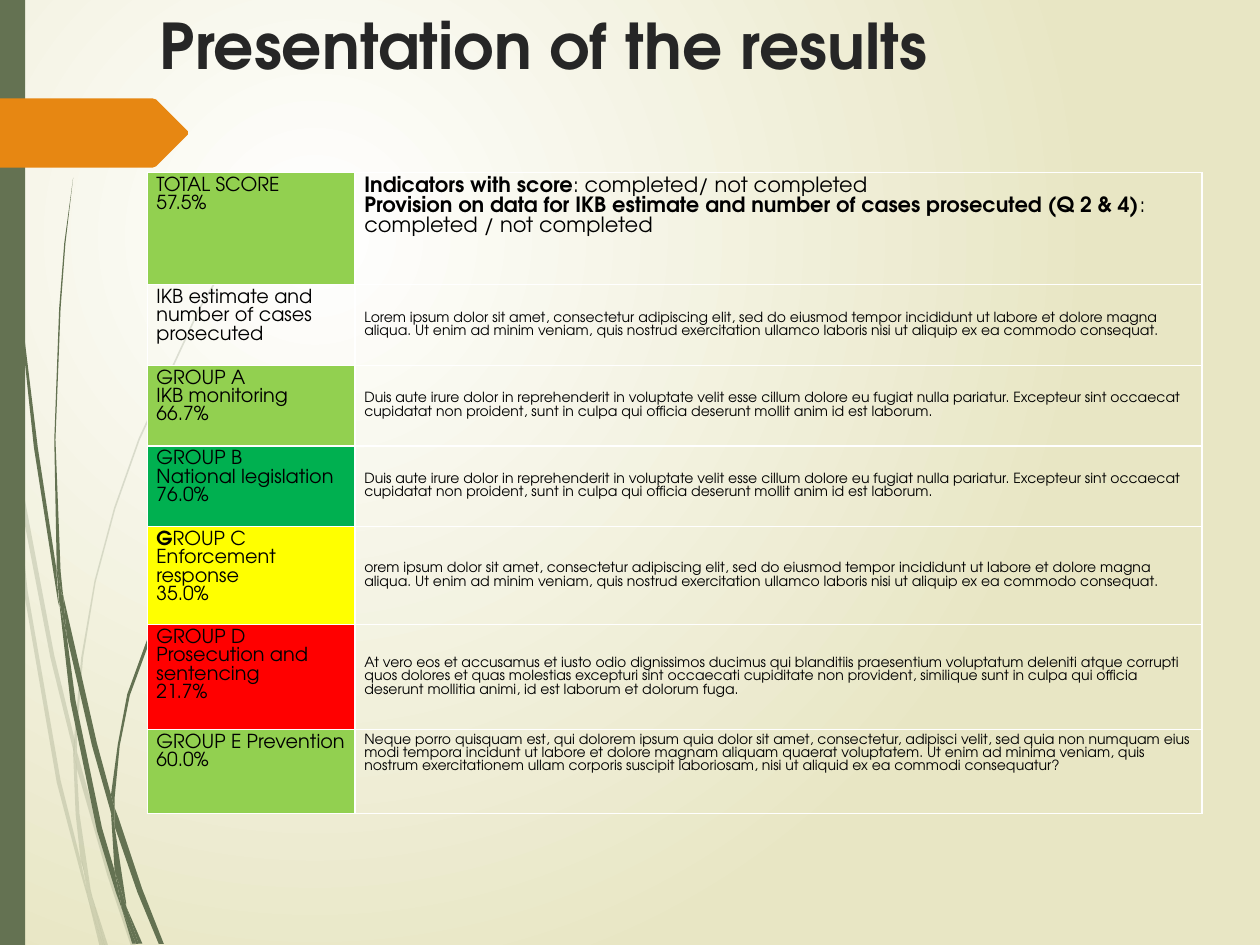
"""Build the results slide: score table on a cream page with grass blades."""
from lxml import etree
from pptx import Presentation
from pptx.dml.color import RGBColor
from pptx.enum import shapes, text
from pptx.oxml.ns import qn
from pptx.util import Pt

FONT = "TeX Gyre Adventor"
WHITE = RGBColor(0xFF, 0xFF, 0xFF)
CREAM = RGBColor(0xE8, 0xE6, 0xC4)
OLIVE = RGBColor(0x64, 0x72, 0x52)
ORANGE = RGBColor(0xE7, 0x87, 0x12)
INK = RGBColor(0x26, 0x26, 0x26)
BLACK = RGBColor(0, 0, 0)
LIME = RGBColor(0x92, 0xD0, 0x50)
GREEN = RGBColor(0, 0xB0, 0x50)
YELLOW = RGBColor(0xFF, 0xFF, 0)
RED = RGBColor(0xFF, 0, 0)

TITLE = "Presentation of the results"
LOREM = ("orem ipsum dolor sit amet, consectetur adipiscing elit, sed do eiusmod tempor "
         "incididunt ut labore et dolore magna aliqua. Ut enim ad minim veniam, quis nostrud "
         "exercitation ullamco laboris nisi ut aliquip ex ea commodo consequat.")
DUIS = ("Duis aute irure dolor in reprehenderit in voluptate velit esse cillum dolore eu "
        "fugiat nulla pariatur. Excepteur sint occaecat cupidatat non proident, sunt in "
        "culpa qui officia deserunt mollit anim id est laborum.")
VERO = ("At vero eos et accusamus et iusto odio dignissimos ducimus qui blanditiis "
        "praesentium voluptatum deleniti atque corrupti quos dolores et quas molestias "
        "excepturi sint occaecati cupiditate non provident, similique sunt in culpa qui "
        "officia deserunt mollitia animi, id est laborum et dolorum fuga.")
NEQUE = ("Neque porro quisquam est, qui dolorem ipsum quia dolor sit amet, consectetur, "
         "adipisci velit, sed quia non numquam eius modi tempora incidunt ut labore et "
         "dolore magnam aliquam quaerat voluptatem. Ut enim ad minima veniam, quis nostrum "
         "exercitationem ullam corporis suscipit laboriosam, nisi ut aliquid ex ea commodi "
         "consequatur?")
INDICATORS = ("*Indicators with score*: completed/ not completed\n"
              "*Provision on data for IKB estimate and number of cases prosecuted (Q 2 & 4)*"
              ": completed / not completed")
TOP, MIDDLE = text.MSO_ANCHOR.TOP, text.MSO_ANCHOR.MIDDLE
ROWS = [
    (64.1, "TOTAL SCORE\n57.5%", LIME, INDICATORS, 12, TOP),
    (46.1, "IKB estimate and number of cases prosecuted", None, "L" + LOREM, 8, MIDDLE),
    (46.1, "GROUP A\nIKB monitoring\n66.7%", LIME, DUIS, 8, MIDDLE),
    (46.1, "GROUP B\nNational legislation\n76.0%", GREEN, DUIS, 8, MIDDLE),
    (56, "*G*ROUP C\nEnforcement response\n35.0%", YELLOW, LOREM, 8, MIDDLE),
    (59.8, "GROUP D\nProsecution and sentencing\n21.7%", RED, VERO, 8, MIDDLE),
    (48.2, "GROUP E Prevention\n60.0%", LIME, NEQUE, 8, TOP),
]
COLS = [118.8, 483.8]

PALE_BLADES = [
    [(5.8, 252), (4.3, 231.8), (0, 203), (0, 215.3), (5, 247.7)],
    [(28.8, 375.8), (42.5, 431.3), (42.5, 421.9), (31, 374.4), (7.2, 248.4), (8.6, 270.7)],
    [(46.1, 437), (43.9, 429.1), (43.9, 439.2), (61.2, 499.7), (74.9, 540.7),
     (77.8, 540.7), (63.4, 498.2)],
    [(59.8, 540.7), (61.9, 540.7), (52.6, 511.9)],
    [(46.1, 491.8), (34.6, 445.7), (15.8, 337.7), (8.6, 270.7), (5.8, 252), (13.7, 338.4),
     (32.4, 447.1), (46.1, 499), (50.4, 514.1), (49.7, 509)],
    [(41.8, 431.3), (43.2, 465.1), (46.1, 491.8), (48.2, 498.2), (52.6, 511.9),
     (51.8, 508.3), (45.4, 465.1), (43.9, 439.2), (43.9, 437.8)],
    [(43.9, 420.5), (47.5, 375.8), (54.7, 332.6), (65.9, 290.9), (79.9, 251.3),
     (114.5, 176.4), (134.6, 142.6), (144.7, 126), (156.2, 110.9), (156.2, 110.2),
     (144.7, 126), (133.9, 141.8), (113.8, 175.7), (79.2, 250.6), (65.2, 290.2),
     (54, 331.9), (46.4, 375.8), (42.5, 420.5), (42.5, 421.9), (43.9, 429.1)],
    [(50.4, 514.1), (56.9, 540.7), (59, 540.7)],
    [(43.9, 437.8), (43.9, 439.2), (43.9, 429.1), (42.5, 421.9), (41.8, 431.3)],
    [(48.2, 498.2), (46.8, 491.8), (49.7, 509), (50.4, 514.1), (59, 540.7),
     (59.8, 540.7), (52.6, 511.9)],
]
DARK_BLADES = [
    [(3.6, 79.2), (10.1, 167.8), (19.4, 255.6), (33.1, 343.4), (33.8, 346.3), (32.4, 329),
     (32.4, 326.2), (21.6, 255.6), (10.8, 167), (4.3, 78.5), (2.9, 34.6), (2.2, 0),
     (1.4, 0), (2.2, 34.6)],
    [(52.6, 426.2), (63.4, 464.4), (63.4, 455.8), (63.4, 454.3), (55.4, 424.8),
     (36, 339.8), (38.2, 363.6)],
    [(67.7, 467.3), (65.5, 461.5), (65.5, 472.3), (78.5, 509.8), (90.7, 539.3),
     (93.6, 539.3), (81.4, 508.3)],
    [(65.5, 497.5), (58.3, 473), (43.2, 400.3), (38.2, 363.6), (33.8, 343.4), (40.3, 401),
     (55.4, 474.5), (66.2, 509.8), (69.8, 519.8), (69.1, 516.2)],
    [(36, 339.8), (34.6, 326.2), (31.7, 251.3), (34.6, 176.4), (37.4, 139), (41.8, 101.5),
     (36.7, 139), (33.8, 176.4), (31, 251.3), (32.4, 323.3), (35.3, 339.8)],
    [(79.2, 539.3), (81.4, 539.3), (72, 517.7)],
    [(33.8, 343.4), (38.2, 363.6), (36, 339.8), (35.3, 339.8), (32.4, 323.3), (32.4, 326.2)],
    [(65.5, 455.8), (68.4, 426.2), (74.2, 397.4), (94.3, 342.7), (121.7, 292.3),
     (137.5, 269.3), (146.2, 258.5), (155.5, 247.7), (154.8, 247.7), (146.2, 257.8),
     (137.5, 268.6), (121, 291.6), (92.9, 341.3), (72.7, 396.7), (67.3, 425.5),
     (63.4, 454.3), (65.5, 461.5)],
    [(69.8, 519.8), (75.6, 539.3), (77.8, 539.3)],
    [(63.4, 464.4), (65.5, 497.5), (69.1, 508.3), (72, 517.7), (72, 515.5),
     (65.5, 472.3), (64.8, 468.7)],
    [(63.4, 464.4), (64.8, 468.7), (65.5, 472.3), (65.5, 461.5), (63.4, 454.3)],
    [(69.1, 508.3), (65.5, 497.5), (69.1, 516.2), (69.8, 519.8), (77.8, 539.3),
     (79.2, 539.3), (72, 517.7)],
]
ARROW = [(0, 56.2), (87.1, 56.2), (89.3, 56.9), (107.3, 74.9), (107.3, 77), (89.3, 95),
         (87.1, 95.8), (0, 95.8)]


def paint(sp, color, alpha=None):
    sp.shadow.inherit = False
    sp.fill.solid()
    sp.fill.fore_color.rgb = color
    sp.line.fill.background()
    if alpha:
        clr = sp._element.spPr.find(qn("a:solidFill"))[0]
        etree.SubElement(clr, qn("a:alpha"), val=str(alpha * 1000))


def add_outline(s, points, color, alpha=None):
    pts = [(Pt(x), Pt(y)) for x, y in points]
    fb = s.shapes.build_freeform(*pts[0])
    fb.add_line_segments(pts[1:])
    paint(fb.convert_to_shape(), color, alpha)


def style(r, size, color, bold):
    r.font.name, r.font.size, r.font.bold = FONT, Pt(size), bold
    r.font.color.rgb = color


def fill_cell(cell, content, size, color, anchor):
    cell.margin_left = cell.margin_right = Pt(5.2)
    cell.margin_top = cell.margin_bottom = Pt(2.6)
    cell.vertical_anchor = anchor
    if color is None:
        cell.fill.background()
    else:
        cell.fill.solid()
        cell.fill.fore_color.rgb = color
    tf = cell.text_frame
    tf.text = content
    for p in tf.paragraphs:
        parts = p.text.split("*")
        p.text = ""
        p.line_spacing = Pt(round(size * 0.945, 1))
        for i, part in enumerate(parts):
            if part:
                r = p.add_run()
                r.text = part
                style(r, size, BLACK, i % 2 == 1)


def add_background(s):
    fill = s.background.fill
    fill.gradient()
    for stop, color in zip(fill.gradient_stops, (WHITE, CREAM)):
        stop.color.rgb = color
    grad = s._element.find(".//" + qn("a:gradFill"))
    grad.remove(grad.find(qn("a:lin")))
    circle = etree.SubElement(grad, qn("a:path"), path="circle")
    etree.SubElement(circle, qn("a:fillToRect"), l="50000", t="50000", r="100000", b="100000")


def main():
    prs = Presentation()
    prs.slide_width, prs.slide_height = Pt(720), Pt(540)
    s = prs.slides.add_slide(prs.slide_layouts[6])
    add_background(s)
    for blades, alpha in ((PALE_BLADES, 20), (DARK_BLADES, None)):
        for blade in blades:
            add_outline(s, blade, OLIVE, alpha)
    paint(s.shapes.add_shape(shapes.MSO_SHAPE.RECTANGLE, 0, 0, Pt(14.4), Pt(540)), OLIVE)
    add_outline(s, ARROW, ORANGE)

    tf = s.shapes.add_textbox(Pt(84.2), 0, Pt(526.3), Pt(75.6)).text_frame
    tf.word_wrap = True
    tf.text = TITLE
    style(tf.paragraphs[0].runs[0], 36, INK, True)

    height = sum(row[0] for row in ROWS)
    frame = s.shapes.add_table(len(ROWS), len(COLS), Pt(84.2), Pt(98.6), Pt(sum(COLS)), Pt(height))
    table = frame.table
    table.first_row = table.horz_banding = False
    for col, width in zip(table.columns, COLS):
        col.width = Pt(width)
    for row, (h, label, color, note, size, anchor) in zip(table.rows, ROWS):
        row.height = Pt(h)
        fill_cell(row.cells[0], label, 11, color, TOP)
        fill_cell(row.cells[1], note, size, None, anchor)
    prs.save("out.pptx")


if __name__ == "__main__":
    main()
